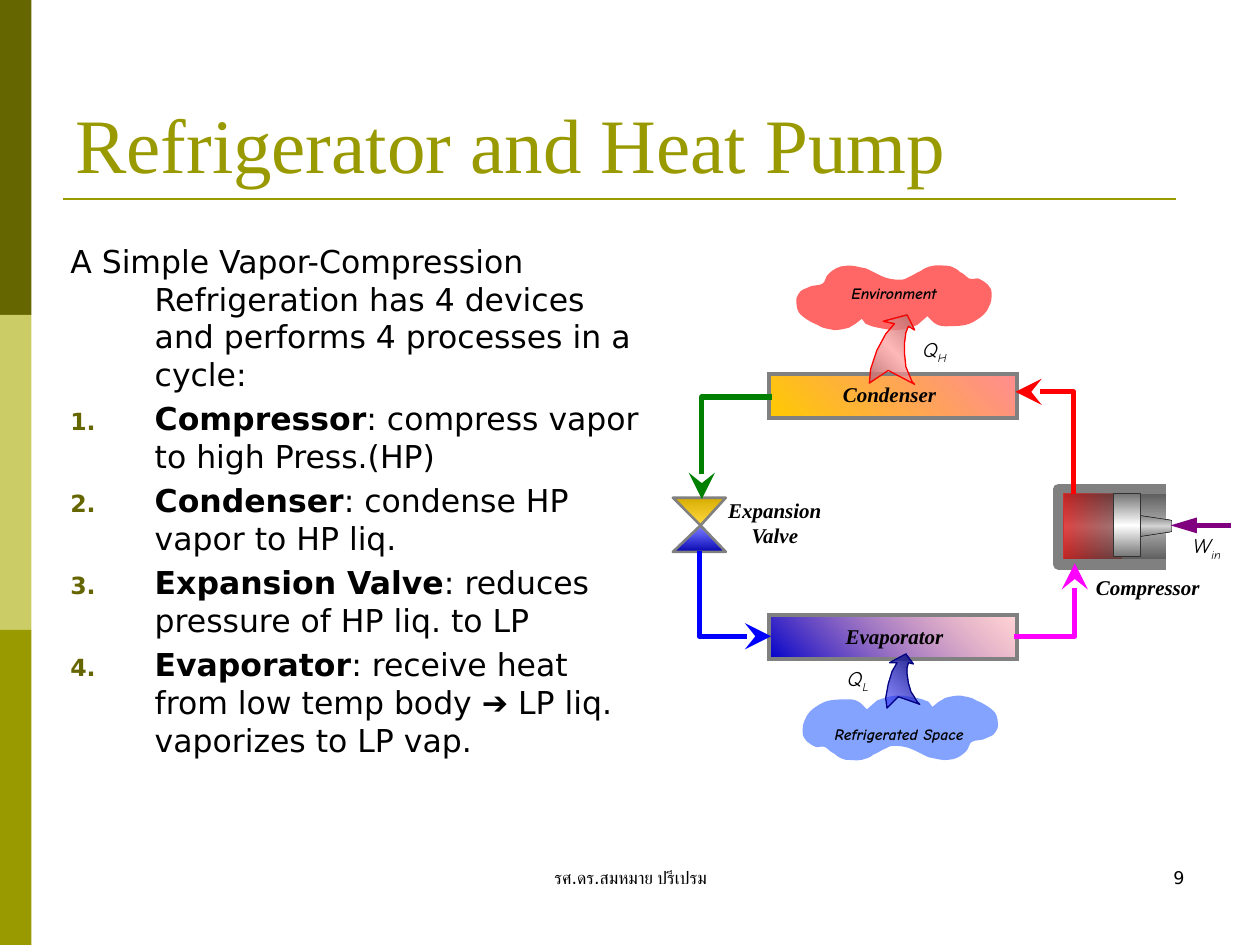
from dataclasses import dataclass
from typing import Optional

from lxml.etree import SubElement
from pptx import Presentation
from pptx.dml.color import RGBColor
from pptx.enum.shapes import MSO_CONNECTOR as CONN, MSO_SHAPE as SHAPE
from pptx.enum.text import MSO_ANCHOR as ANCHOR, PP_ALIGN as ALIGN
from pptx.oxml import parse_xml
from pptx.oxml.ns import nsdecls, qn
from pptx.util import Emu, Pt

PX = 9144  # one px is a hundredth of an inch

COLORS = {
    "black": "000000", "olive": "999900", "olive_dark": "666600", "olive_light": "CCCC66",
    "gray": "808080", "gray_dark": "525252", "gray_mid": "B2B2B2", "gray_light": "D3D3D3",
    "steel": "767676", "white": "FFFFFF", "edge": "333333",
    "gold": "FFCC00", "gold_dark": "D6AB00", "salmon": "FF7C80",
    "red": "FF0000", "maroon": "760000", "rose": "FF9999", "rose_dark": "B66D6D",
    "blue": "0000FF", "blue_dark": "0000AA", "blue_deep": "0000CC", "sky": "3366FF",
    "indigo": "3333FF", "indigo_dark": "181876", "navy": "000080",
    "magenta": "FF00FF", "green": "008000", "purple": "800080",
}
SANS, SERIF, COMIC = "DejaVu Sans", "Times New Roman", "Comic Neue"


@dataclass
class Paint:
    """Stops are (position %, colour, opacity %); a single stop is a solid fill."""
    stops: list
    angle: int = 0


@dataclass
class Line:
    color: str
    width: float
    tail: str = ""
    tail_width: str = "lg"


@dataclass
class Part:
    """A box (left, top, width, height), or an outline of points and six-number Bezier curves."""
    geometry: object
    paint: Optional[Paint] = None
    line: Optional[Line] = None
    closed: bool = True


@dataclass
class Label:
    box: tuple
    text: str
    sub: str = ""
    font: str = SERIF
    size: int = 12
    bold: bool = True


def rgb(name: str) -> RGBColor:
    return RGBColor.from_string(COLORS[name])


def solid(color: str, alpha: int = 100) -> Paint:
    return Paint([(0, color, alpha)])


def set_paint(sp, paint: Optional[Paint]) -> None:
    sp.fill.background()
    if paint is None:
        return
    clr = [f'<a:srgbClr val="{COLORS[c]}"><a:alpha val="{a * 1000}"/></a:srgbClr>'
           for _, c, a in paint.stops]
    if len(clr) == 1:
        xml = f'<a:solidFill {nsdecls("a")}>{clr[0]}</a:solidFill>'
    else:
        gs = "".join(f'<a:gs pos="{st[0] * 1000}">{c}</a:gs>' for st, c in zip(paint.stops, clr))
        xml = (f'<a:gradFill {nsdecls("a")} rotWithShape="1"><a:gsLst>{gs}</a:gsLst>'
               f'<a:lin ang="{paint.angle * 60000}" scaled="0"/></a:gradFill>')
    spPr = sp._element.spPr
    spPr.replace(spPr.find(qn("a:noFill")), parse_xml(xml))


def set_line(sp, line: Optional[Line], join: str = "round") -> None:
    if line is None:
        sp.line.fill.background()
        return
    sp.line.color.rgb = rgb(line.color)
    sp.line.width = Pt(line.width)
    ln = sp.line._get_or_add_ln()
    SubElement(ln, qn(f"a:{join}"))
    if line.tail:
        SubElement(ln, qn("a:tailEnd"), type=line.tail, w=line.tail_width, len="lg")


def add_outline(s, segments: list, closed: bool):
    """Each segment ends in its last two numbers; six numbers make a curve."""
    ends = [(seg[-2] * PX, seg[-1] * PX) for seg in segments]
    builder = s.shapes.build_freeform(*ends[0])
    builder.add_line_segments(ends[1:], close=closed)
    sp = builder.convert_to_shape()
    steps = list(sp._element.iter(qn("a:lnTo")))
    for step, seg in zip(steps, segments[1:]):
        if len(seg) == 6:
            step.tag = qn("a:cubicBezTo")
            for i in (2, 0):
                step.insert(0, step.makeelement(qn("a:pt"), {
                    "x": str(seg[i] * PX - sp.left), "y": str(seg[i + 1] * PX - sp.top)}))
    return sp


def add_part(s, part: Part) -> None:
    boxed = isinstance(part.geometry, tuple)
    if boxed:
        sp = s.shapes.add_shape(SHAPE.RECTANGLE, *(Emu(v * PX) for v in part.geometry))
    else:
        sp = add_outline(s, part.geometry, part.closed)
    sp.shadow.inherit = False
    set_paint(sp, part.paint)
    set_line(sp, part.line, "miter" if boxed else "round")


def add_connector(s, start: tuple, end: tuple, line: Line) -> None:
    c = s.shapes.add_connector(CONN.STRAIGHT, *(Emu(v * PX) for v in start + end))
    set_line(c, line)
    SubElement(c._element.spPr, qn("a:effectLst"))


def add_run(p, text: str, *, font=SANS, size=18, color="black", bold=False, italic=False, base=0):
    r = p.add_run()
    r.text = text
    f = r.font
    f.name, f.size, f.bold, f.italic = font, Pt(size), bold, italic
    f.color.rgb = rgb(color)
    if base:
        r._r.get_or_add_rPr().set("baseline", str(base * 1000))


def add_box(s, box: tuple, align=ALIGN.LEFT, anchor=ANCHOR.TOP):
    tf = s.shapes.add_textbox(*(Emu(v * PX) for v in box)).text_frame
    tf.word_wrap = True
    tf.vertical_anchor = anchor
    tf.paragraphs[0].alignment = align
    return tf


def add_label(s, lb: Label) -> None:
    p = add_box(s, lb.box, ALIGN.CENTER).paragraphs[0]
    fmt = dict(font=lb.font, size=lb.size, bold=lb.bold, italic=True)
    add_run(p, lb.text, **fmt)
    if lb.sub:
        add_run(p, lb.sub, base=-25, **fmt)


def set_indent(p, numbered: bool) -> None:
    pPr = p._p.get_or_add_pPr()
    pPr.set("marL", str(67 * PX))
    pPr.set("indent", str(-67 * PX))
    if numbered:
        SubElement(SubElement(pPr, qn("a:buClr")), qn("a:srgbClr"), val=COLORS["olive_dark"])
        SubElement(pPr, qn("a:buSzPct"), val="75000")
        SubElement(pPr, qn("a:buAutoNum"), type="arabicPeriod")


def half_turn(segments: list, cx2: int, cy2: int) -> list:
    return [tuple((cy2 if i % 2 else cx2) - v for i, v in enumerate(seg)) for seg in segments]


COLD_CLOUD = [
    (790, 566), (792, 569, 792, 574, 792, 577), (791, 580, 789, 583, 787, 584), (780, 587),
    (777, 588, 774, 587, 771, 589), (769, 590, 769, 595, 766, 597), (763, 600, 758, 603, 753, 603),
    (748, 604, 743, 602, 737, 601), (732, 599, 724, 594, 719, 593), (715, 592, 712, 592, 709, 592),
    (706, 592, 705, 593, 703, 594), (700, 595, 696, 598, 693, 599), (691, 601, 688, 602, 684, 603),
    (681, 604, 674, 603, 671, 603), (667, 602, 664, 600, 662, 598), (659, 597, 657, 594, 655, 593),
    (653, 592, 650, 593, 648, 593), (645, 592, 642, 590, 640, 588), (638, 586, 637, 584, 637, 581),
    (637, 578, 637, 574, 639, 571), (640, 568, 642, 565, 646, 562), (649, 560, 653, 557, 658, 556),
    (663, 555, 670, 555, 674, 555), (678, 555, 680, 556, 683, 558), (688, 563), (696, 556),
    (701, 554, 707, 552, 713, 552), (719, 552, 728, 554, 732, 555), (737, 557), (740, 561),
    (745, 557), (750, 554), (753, 553, 758, 552, 762, 552), (766, 553, 771, 553, 775, 556),
    (780, 558, 787, 562, 790, 566)]
HOT_CLOUD = half_turn(COLD_CLOUD, 1424, 814)
HEAT_IN = [(704, 562), (703, 554), (705, 543), (708, 533), (712, 526), (706, 526), (719, 519),
           (725, 527), (721, 526), (720, 530), (720, 535), (721, 542), (723, 549), (725, 552),
           (728, 557), (730, 559), (713, 553)]
HEAT_OUT = [(690, 304), (691, 293), (696, 278), (703, 265), (710, 257), (701, 255), (720, 250),
            (726, 262), (721, 259), (719, 264), (718, 272), (718, 281), (719, 291), (721, 296),
            (724, 303), (726, 305), (705, 294)]


def grad(angle: int, *stops) -> Paint:
    """Evenly spaced stops of (colour, opacity)."""
    return Paint([(100 * i // (len(stops) - 1), c, a) for i, (c, a) in enumerate(stops)], angle)


def metal(edge: str, middle: str) -> Paint:
    return grad(90, (edge, 100), (middle, 100), (edge, 100))


def pipe(color: str, *pts) -> Part:
    return Part(list(pts), None, Line(color, 3, "stealth"), closed=False)


FRAME, VALVE = Line("gray", 2.25), Line("gray", 1.5)
PARTS = [
    # Condenser, evaporator and the two halves of the valve
    Part((610, 297, 197, 35), grad(315, ("gold", 100), ("salmon", 87)), FRAME),
    Part((610, 488, 197, 35), grad(315, ("blue_deep", 100), ("salmon", 32)), FRAME),
    Part([(534, 438), (576, 438), (556, 417)], grad(90, ("blue", 47), ("blue_dark", 100)), VALVE),
    Part([(534, 395), (576, 395), (556, 417)], grad(90, ("gold_dark", 100), ("gold", 74)), VALVE),
    # Compressor: cylinder, rod, vapor and piston
    Part([(925, 388), (840, 388), (840, 448), (925, 448)], metal("gray_dark", "gray_mid"),
         Line("gray", 6), closed=False),
    Part([(904, 409), (930, 413), (930, 422), (904, 426)], metal("gray", "gray_light"),
         Line("black", 0.25)),
    Part((844, 392, 46, 51), grad(0, ("red", 62), ("maroon", 32))),
    Part((884, 392, 21, 50), metal("steel", "white"), Line("edge", 0.5)),
    # Refrigerant pipes
    pipe("red", (852, 392), (852, 311), (806, 311)),
    pipe("magenta", (805, 505), (853, 505), (853, 447)),
    pipe("blue", (555, 437), (555, 505), (612, 505)),
    pipe("green", (613, 315), (557, 315), (557, 396)),
    # Heat reservoirs and heat flows
    Part(COLD_CLOUD, solid("sky", 60)),
    Part(HEAT_IN, grad(315, ("indigo", 53), ("indigo_dark", 100)), Line("navy", 0.75)),
    Part(HOT_CLOUD, solid("red", 60)),
    Part(HEAT_OUT, grad(315, ("rose_dark", 100), ("rose", 68), ("rose_dark", 100)),
         Line("red", 0.75)),
]
LABELS = [
    Label((636, 570, 155, 25), "Refrigerated Space", font=COMIC, size=9),
    Label((632, 220, 155, 25), "Environment", font=COMIC, size=9),
    Label((657, 523, 48, 30), "Q", "L", COMIC, bold=False),
    Label((718, 262, 48, 30), "Q", "H", COMIC, bold=False),
    Label((934, 418, 48, 30), "W", "in", COMIC, bold=False),
    Label((654, 298, 104, 30), "Condenser"),
    Label((563, 390, 104, 50), "Expansion Valve"),
    Label((859, 451, 104, 30), "Compressor"),
    Label((658, 490, 104, 30), "Evaporator"),
]
BODY = [
    ("", "A Simple Vapor-Compression Refrigeration has 4 devices and performs 4 processes in a cycle:"),
    ("Compressor", ": compress vapor to high Press.(HP)"),
    ("Condenser", ": condense HP vapor to HP liq."),
    ("Expansion Valve", ": reduces pressure of HP liq. to LP"),
    ("Evaporator", ": receive heat from low temp body ➔ LP liq. vaporizes to LP vap."),
]


def main() -> None:
    prs = Presentation()
    prs.slide_width, prs.slide_height = Emu(1000 * PX), Emu(750 * PX)
    s = prs.slides.add_slide(prs.slide_layouts[6])

    # Side bands and title rule
    for i, color in enumerate(("olive_dark", "olive_light", "olive")):
        add_part(s, Part((0, 250 * i, 25, 250), solid(color)))
    add_connector(s, (50, 158), (933, 158), Line("olive", 1.5))

    # Footer, page number and title
    add_run(add_box(s, (342, 683, 317, 50), ALIGN.CENTER).paragraphs[0], "รศ.ดร.สมหมาย ปรีเปรม", size=10)
    add_run(add_box(s, (717, 683, 233, 50), ALIGN.RIGHT).paragraphs[0], "9", size=10)
    add_run(add_box(s, (50, 30, 900, 125), anchor=ANCHOR.BOTTOM).paragraphs[0],
            "Refrigerator and Heat Pump", font=SERIF, size=44, color="olive")

    # Body list
    tf = add_box(s, (46, 187, 474, 495))
    for i, (term, text) in enumerate(BODY):
        p = tf.add_paragraph() if i else tf.paragraphs[0]
        p.space_before = Pt(3.6 if i else 0)
        set_indent(p, bool(term))
        if term:
            add_run(p, term, bold=True)
        add_run(p, text)

    # Cycle diagram
    for part in PARTS:
        add_part(s, part)
    add_connector(s, (977, 417), (929, 417), Line("purple", 3, "triangle", "med"))
    for label in LABELS:
        add_label(s, label)

    prs.save("out.pptx")


if __name__ == "__main__":
    main()
